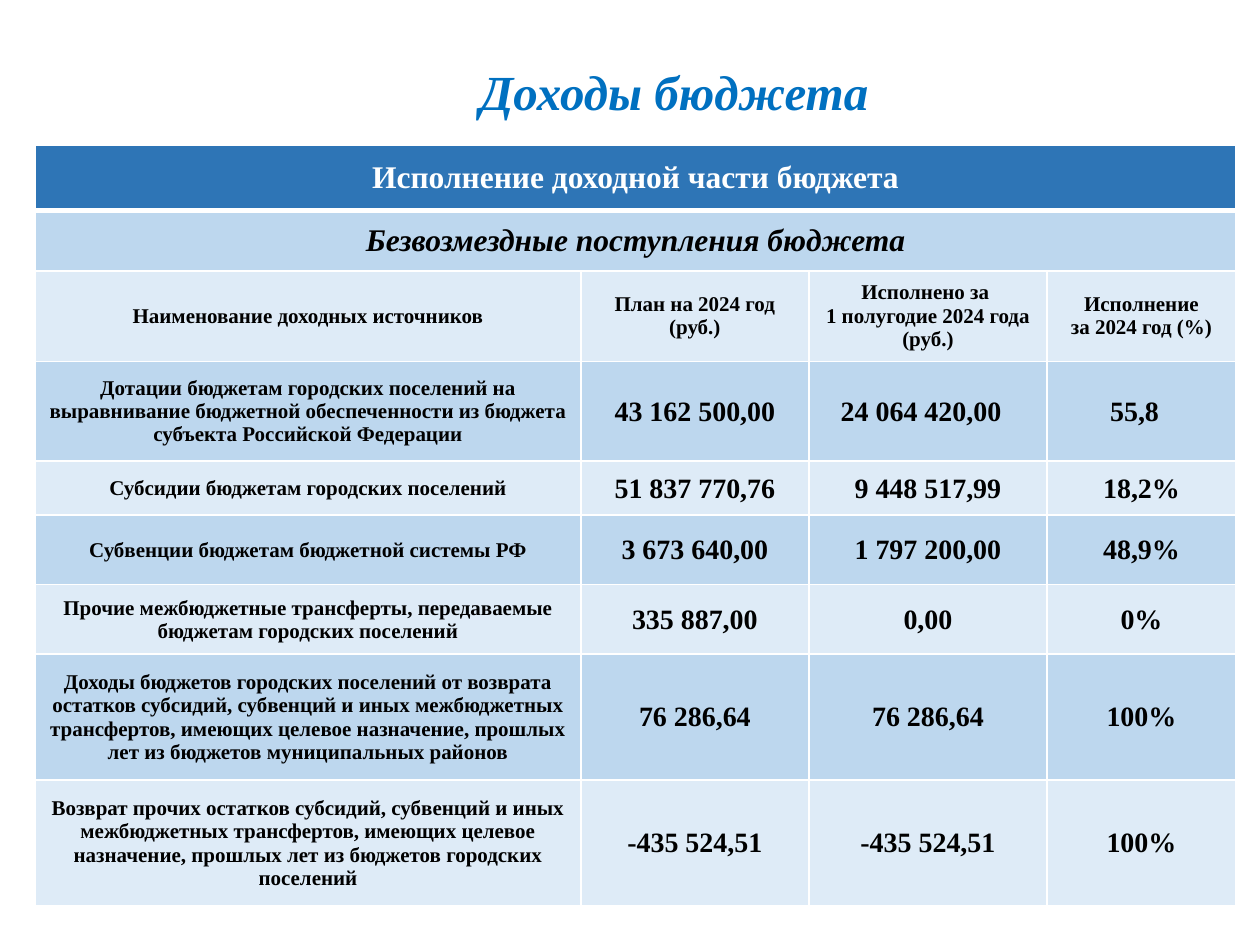
from lxml import etree
from pptx import Presentation
from pptx.dml.color import RGBColor
from pptx.enum.text import MSO_ANCHOR, MSO_AUTO_SIZE, PP_ALIGN
from pptx.oxml.ns import qn
from pptx.util import Inches, Pt

CENTER = PP_ALIGN.CENTER
MIDDLE = MSO_ANCHOR.MIDDLE
GROW = MSO_AUTO_SIZE.SHAPE_TO_FIT_TEXT

COLORS = {
    "title": "0070C0",
    "header": "2E75B6",
    "dark_band": "BDD7EE",
    "light_band": "DEEBF7",
    "white": "FFFFFF",
    "black": "000000",
}
COLUMN_WIDTHS = [4.33, 1.81, 1.89, 1.5]
ROW_HEIGHTS = [0.52, 0.48, 0.72, 0.79, 0.43, 0.55, 0.55, 1, 1]
TITLE = "Доходы бюджета"
BANNERS = ["Исполнение доходной части бюджета", "Безвозмездные поступления бюджета"]
HEADINGS = [
    [["Наименование доходных источников"]],
    [["План на 2024 год"], ["(руб.)"]],
    [["Исполнено за ", "1 полугодие 2024 года"], ["(руб.)"]],
    [["Исполнение", "за 2024 год (%)"]],
]
INCOME = [
    ["Дотации бюджетам городских поселений на выравнивание бюджетной обеспеченности "
     "из бюджета субъекта Российской Федерации",
     "43 162 500,00", "24 064 420,00", "55,8"],
    ["Субсидии бюджетам городских поселений",
     "51 837 770,76", "9 448 517,99", "18,2%"],
    ["Субвенции бюджетам бюджетной системы РФ",
     "3 673 640,00", "1 797 200,00", "48,9%"],
    ["Прочие межбюджетные трансферты, передаваемые бюджетам городских поселений",
     "335 887,00", "0,00", "0%"],
    ["Доходы бюджетов городских поселений от возврата остатков субсидий, субвенций "
     "и иных межбюджетных трансфертов, имеющих целевое назначение, прошлых лет "
     "из бюджетов муниципальных районов",
     "76 286,64", "76 286,64", "100%"],
    ["Возврат прочих остатков субсидий, субвенций и иных межбюджетных трансфертов, "
     "имеющих целевое назначение, прошлых лет из бюджетов городских поселений",
     "-435 524,51", "-435 524,51", "100%"],
]


class SlideBuilder:
    """Draws styled elements on the current slide."""

    def __init__(self, slide, font="Times New Roman"):
        self.slide = slide
        self.font = font

    def add_text(self, frame, paragraphs, size, color="black", italic=False):
        for index, lines in enumerate(paragraphs):
            para = frame.paragraphs[0] if index == 0 else frame.add_paragraph()
            para.alignment = CENTER
            for number, line in enumerate(lines):
                if number:
                    para.add_line_break()
                span = para.add_run()
                span.text = line
                span.font.name = self.font
                span.font.size = Pt(size)
                span.font.bold = True
                span.font.italic = italic
                span.font.color.rgb = RGBColor.from_string(COLORS[color])

    def text_box(self, left, top, width, height, content, size, color):
        box = self.slide.shapes.add_textbox(
            Inches(left), Inches(top), Inches(width), Inches(height))
        box.text_frame.word_wrap = True
        box.text_frame.auto_size = GROW
        self.add_text(box.text_frame, [[content]], size, color, italic=True)

    def table(self, left, top, widths, heights):
        frame = self.slide.shapes.add_table(
            len(heights), len(widths), Inches(left), Inches(top),
            Inches(sum(widths)), Inches(sum(heights)))
        table = frame.table
        for column, width in zip(table.columns, widths):
            column.width = Inches(width)
        for index, (row, height) in enumerate(zip(table.rows, heights)):
            row.height = Inches(height)
            band = "dark_band" if index % 2 else "light_band"
            for cell in row.cells:
                self.borders(cell, top=3 if index == 1 else 1, bottom=3 if index == 0 else 1)
                cell.fill.solid()
                cell.fill.fore_color.rgb = RGBColor.from_string(
                    COLORS[band if index else "header"])
                cell.vertical_anchor = MIDDLE
        return table

    def borders(self, cell, top, bottom):
        properties = cell._tc.get_or_add_tcPr()
        for side, points in (("L", 1), ("R", 1), ("T", top), ("B", bottom)):
            line = etree.SubElement(properties, qn(f"a:ln{side}"), w=str(Pt(points)))
            fill = etree.SubElement(line, qn("a:solidFill"))
            etree.SubElement(fill, qn("a:srgbClr"), val=COLORS["white"])

    def banner(self, table, row, content, color, italic):
        cell = table.cell(row, 0)
        cell.merge(table.cell(row, len(table.columns) - 1))
        self.add_text(cell.text_frame, [[content]], 18, color, italic)

    def tighten(self, cell, right=0.01):
        cell.margin_left = cell.margin_top = Inches(0.01)
        cell.margin_right = Inches(right)
        cell.margin_bottom = 0


def main():
    deck = Presentation()
    deck.slide_width = Inches(10)
    deck.slide_height = Inches(7.5)
    builder = SlideBuilder(deck.slides.add_slide(deck.slide_layouts[6]))

    table = builder.table(0.28, 1.15, COLUMN_WIDTHS, ROW_HEIGHTS)
    builder.banner(table, 0, BANNERS[0], "white", italic=False)
    builder.banner(table, 1, BANNERS[1], "black", italic=True)
    for column, heading in enumerate(HEADINGS):
        builder.add_text(table.cell(2, column).text_frame, heading, 12)
    for row, values in enumerate(INCOME, start=3):
        for column, value in enumerate(values):
            cell = table.cell(row, column)
            if row > 3 or column:
                builder.tighten(cell, right=0.12 if row == 3 and column > 1 else 0.01)
            builder.add_text(cell.text_frame, [[value]], 16 if column else 12)

    builder.text_box(3.5, 0.44, 3.7, 0.57, TITLE, 28, "title")
    deck.save("out.pptx")


if __name__ == "__main__":
    main()
